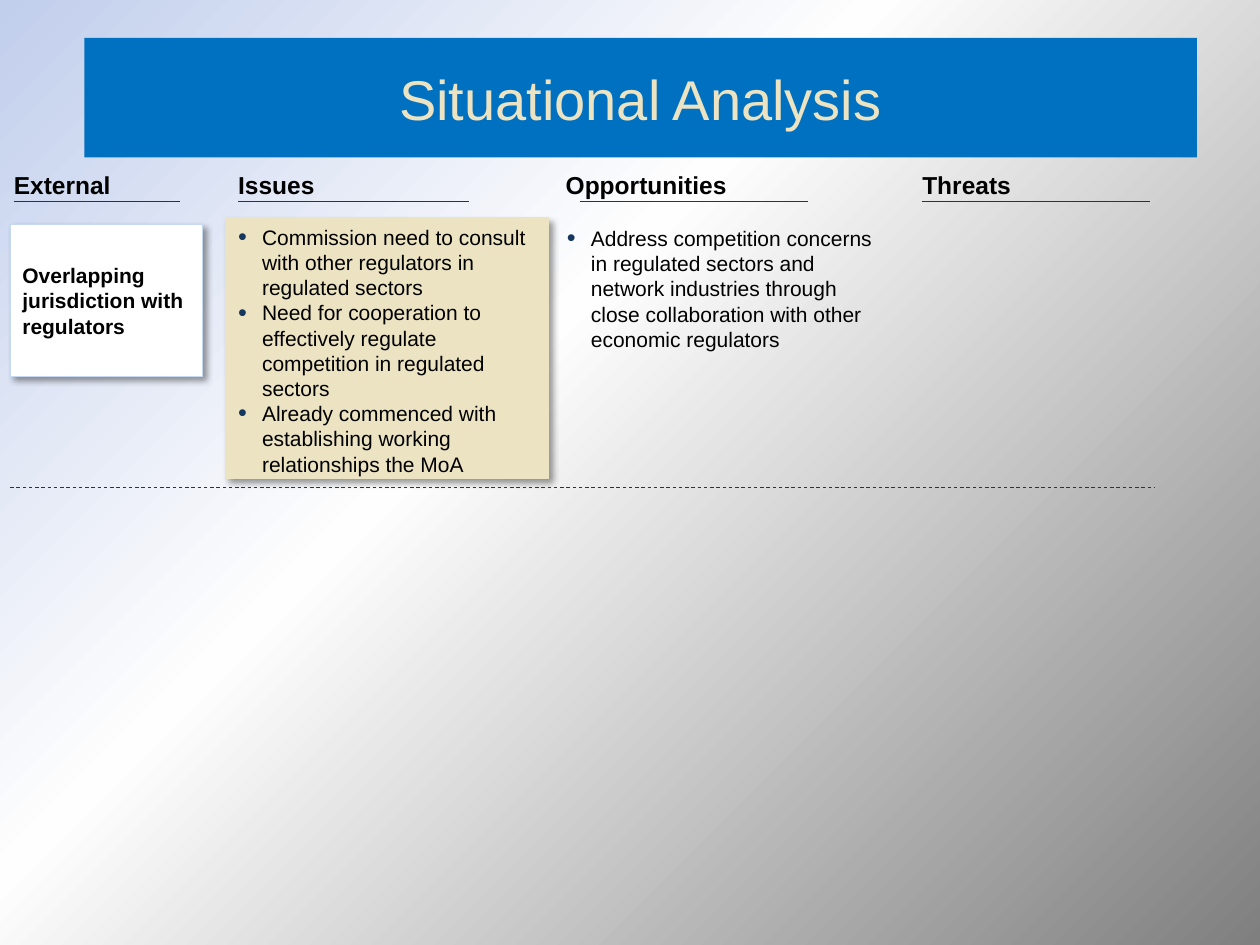
from dataclasses import dataclass

from lxml.etree import SubElement as Sub
from pptx import Presentation
from pptx.dml.color import RGBColor as Rgb
from pptx.enum.dml import MSO_LINE as Dash
from pptx.enum.shapes import MSO_CONNECTOR as Link, MSO_SHAPE as Kind
from pptx.enum.text import MSO_ANCHOR as Anchor, MSO_AUTO_SIZE as Fit, PP_ALIGN as Align
from pptx.oxml.ns import qn
from pptx.util import Inches, Pt


@dataclass(frozen=True)
class Theme:
    font: str = "Arial"
    ink: str = "000000"
    navy: str = "17375E"
    blue: str = "0070C0"
    sand: str = "EBE3C2"
    white: str = "FFFFFF"
    pale: str = "C6D9F1"
    stops: tuple = ((0, "C1CEEC"), (40, "FEFEFE"), (100, "7F7F7F"))
    title: int = 32
    head: int = 14
    body: int = 12
    rule: float = 0.5


def node(base, tag, **attrs):
    return Sub(base, qn(tag), {key: str(val) for key, val in attrs.items()})


class Board:
    COLS, ROWS = 100, 75

    def __init__(self, deck, theme):
        self.deck = deck
        self.theme = theme
        self.slide = deck.slides.add_slide(deck.slide_layouts[5])

    def grid(self, col, row):
        return (int(self.deck.slide_width * col / self.COLS),
                int(self.deck.slide_height * row / self.ROWS))

    def place(self, col, row, wide, high):
        return *self.grid(col, row), *self.grid(wide, high)

    def backdrop(self):
        fill = self.slide.background.fill
        fill.gradient()
        grad = self.slide.element.find(".//" + qn("a:gradFill"))
        for child in list(grad):
            grad.remove(child)
        stops = node(grad, "a:gsLst")
        for share, tone in self.theme.stops:
            stop = node(stops, "a:gs", pos=share * 1000)
            node(stop, "a:srgbClr", val=tone)
        node(grad, "a:lin", ang=45 * 60000, scaled=0)

    def style(self, frame, text, size, tone=None, bold=False):
        frame.text = text
        frame.word_wrap = True
        for para in frame.paragraphs:
            for run in para.runs:
                font = run.font
                font.name, font.size, font.bold = self.theme.font, Pt(size), bold
                font.color.rgb = Rgb.from_string(tone or self.theme.ink)

    def title(self, text, *area):
        shape = self.slide.shapes.title
        shape.left, shape.top, shape.width, shape.height = self.place(*area)
        shape.fill.solid()
        shape.fill.fore_color.rgb = Rgb.from_string(self.theme.blue)
        frame = shape.text_frame
        self.style(frame, text, self.theme.title, self.theme.sand)
        frame.auto_size = Fit.NONE
        frame.vertical_anchor = Anchor.MIDDLE
        frame.paragraphs[0].alignment = Align.CENTER

    def card(self, area, fill, edge, text=""):
        shape = self.slide.shapes.add_shape(Kind.RECTANGLE, *self.place(*area))
        shape.fill.solid()
        shape.fill.fore_color.rgb = Rgb.from_string(fill)
        shape.line.color.rgb = Rgb.from_string(edge)
        shape.line.width = Pt(self.theme.rule)
        shape.shadow.inherit = False
        glow = node(shape.element.spPr.find(qn("a:effectLst")), "a:outerShdw",
                    blurRad=Pt(4), dist=Pt(3), dir=45 * 60000,
                    algn="tl", rotWithShape=0)
        tone = node(glow, "a:srgbClr", val=self.theme.ink)
        node(tone, "a:alpha", val=40000)
        if text:
            self.style(shape.text_frame, text, self.theme.body, bold=True)
            shape.text_frame.vertical_anchor = Anchor.MIDDLE
            shape.text_frame.paragraphs[0].alignment = Align.LEFT

    def label(self, text, area, size, bold=False):
        box = self.slide.shapes.add_textbox(*self.place(*area))
        frame = box.text_frame
        frame.margin_left = frame.margin_right = 0
        frame.margin_top = frame.margin_bottom = 0
        self.style(frame, text, size, bold=bold)
        frame.auto_size = Fit.SHAPE_TO_FIT_TEXT
        return frame

    def bullets(self, items, area):
        frame = self.label("\n".join(items), area, self.theme.body)
        for para in frame.paragraphs:
            props = para._p.get_or_add_pPr()
            props.set("marL", str(Inches(0.19)))
            props.set("indent", str(-Inches(0.19)))
            node(node(props, "a:buClr"), "a:srgbClr", val=self.theme.navy)
            node(props, "a:buSzPct", val=120000)
            node(props, "a:buFont", typeface=self.theme.font)
            node(props, "a:buChar", char="•")

    def rule(self, left, right, row, dash=None):
        line = self.slide.shapes.add_connector(
            Link.STRAIGHT, *self.grid(left, row), *self.grid(right, row))
        line.line.color.rgb = Rgb.from_string(self.theme.navy)
        line.line.width = Pt(self.theme.rule)
        if dash:
            line.line.dash_style = dash
        node(line._element.spPr, "a:effectLst")


def main():
    deck = Presentation()
    deck.slide_width, deck.slide_height = Inches(10), Inches(7.5)
    theme = Theme()
    board = Board(deck, theme)
    board.backdrop()
    board.title("Situational Analysis", 6.7, 3, 88.3, 9.5)
    board.card((17.9, 17.3, 25.6, 20.7), theme.sand, theme.sand)

    heads = (("Issues", 18.9, 24.6, 18.9, 37.2),
             ("External", 1.1, 17.6, 1.1, 14.3),
             ("Opportunities", 44.9, 24.6, 46, 64.1),
             ("Threats", 73.2, 24.6, 73.2, 91.3))
    for text, col, wide, left, right in heads:
        board.label(text, (col, 13.5, wide, 2.4), theme.head, bold=True)
        board.rule(left, right, 16)

    board.bullets((
        "Commission need to consult with other regulators in regulated sectors",
        "Need for cooperation to effectively regulate competition in regulated sectors",
        "Already commenced with establishing working relationships the MoA",
    ), (18.9, 17.8, 24.6, 20.2))
    board.card((0.8, 17.8, 15.3, 12.1), theme.white, theme.pale,
               "Overlapping jurisdiction with regulators")
    board.rule(0.8, 91.7, 38.7, Dash.DASH)
    board.bullets((
        "Address competition concerns in regulated sectors and network industries "
        "through close collaboration with other economic regulators",
    ), (45, 17.9, 24.6, 14.1))
    deck.save("out.pptx")


if __name__ == "__main__":
    main()
